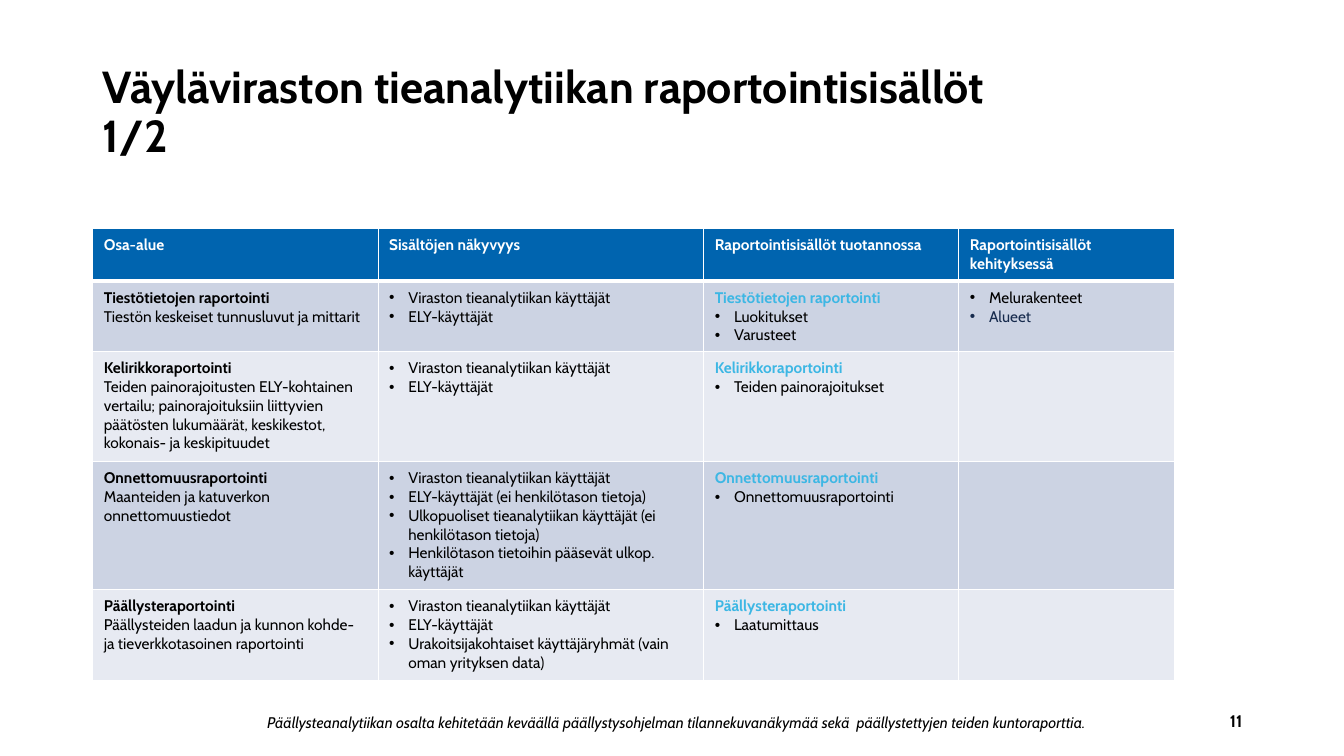
from dataclasses import dataclass

from lxml import etree
from pptx import Presentation
from pptx import util as u
from pptx.dml.color import RGBColor
from pptx.enum import text as t
from pptx.oxml import ns

FONT = "Cabin"
BLACK = RGBColor(0x00, 0x00, 0x00)
WHITE = RGBColor(0xFF, 0xFF, 0xFF)
HEADER_BLUE = RGBColor(0x00, 0x64, 0xAF)
LINK_BLUE = RGBColor(0x3D, 0xB7, 0xE4)
NAVY = RGBColor(0x17, 0x2B, 0x4D)
BANDS = (RGBColor(0xCC, 0xD3, 0xE3), RGBColor(0xE7, 0xEA, 0xF2))

COLUMN_WIDTHS = (2.83, 3.23, 2.53, 2.14)
ROW_HEIGHTS = (0.52, 0.7, 1.09, 1.27, 0.9)
BULLET_INDENT = u.Inches(0.19)


@dataclass(frozen=True)
class Line:
    text: str
    size: float = 11
    color: RGBColor = BLACK
    bold: bool = False
    italic: bool = False
    bullet: bool = False
    align: t.PP_ALIGN = t.PP_ALIGN.LEFT


@dataclass(frozen=True)
class Area:
    name: str
    description: str
    viewers: tuple[str, ...]
    in_production: tuple[str, ...]
    in_development: tuple[Line, ...] = ()


def bullets(*texts: str) -> list[Line]:
    return [Line(text, bullet=True) for text in texts]


def write(frame, lines: list[Line]) -> None:
    for index, line in enumerate(lines):
        paragraph = frame.add_paragraph() if index else frame.paragraphs[0]
        paragraph.alignment = line.align
        if line.bullet:
            properties = paragraph._p.get_or_add_pPr()
            properties.set("marL", str(BULLET_INDENT))
            properties.set("indent", str(-BULLET_INDENT))
            etree.SubElement(properties, ns.qn("a:buFont"), typeface="Arial")
            etree.SubElement(properties, ns.qn("a:buChar"), char="•")
        run = paragraph.add_run()
        run.text = line.text
        style = {"name": FONT, "size": u.Pt(line.size),
                 "bold": line.bold, "italic": line.italic}
        for attribute, value in style.items():
            setattr(run.font, attribute, value)
        run.font.color.rgb = line.color


def add_text(slide, place: tuple[float, ...], line: Line, anchor: t.MSO_ANCHOR) -> None:
    frame = slide.shapes.add_textbox(*map(u.Inches, place)).text_frame
    frame.word_wrap = True
    frame.vertical_anchor = anchor
    write(frame, [line])


def set_borders(cell, bottom: float) -> None:
    properties = cell._tc.get_or_add_tcPr()
    for side, width in (("L", 1), ("R", 1), ("T", 1), ("B", bottom)):
        border = etree.SubElement(properties, ns.qn(f"a:ln{side}"), w=str(u.Pt(width)))
        fill = etree.SubElement(border, ns.qn("a:solidFill"))
        etree.SubElement(fill, ns.qn("a:srgbClr"), val=str(WHITE))


def fill_cell(cell, lines: list[Line], color: RGBColor, bottom: float = 1) -> None:
    margins = {"margin_left": 0.11, "margin_right": 0.11,
               "margin_top": 0.07, "margin_bottom": 0.07}
    for attribute, value in margins.items():
        setattr(cell, attribute, u.Inches(value))
    set_borders(cell, bottom)
    cell.fill.solid()
    cell.fill.fore_color.rgb = color
    write(cell.text_frame, lines)


HEADINGS = ("Osa-alue", "Sisältöjen näkyvyys",
            "Raportointisisällöt tuotannossa", "Raportointisisällöt kehityksessä")
AGENCY = "Viraston tieanalytiikan käyttäjät"
ELY = "ELY-käyttäjät"
AREAS = (
    Area("Tiestötietojen raportointi",
         "Tiestön keskeiset tunnusluvut ja mittarit",
         (AGENCY, ELY),
         ("Luokitukset", "Varusteet"),
         (Line("Melurakenteet", bullet=True), Line("Alueet", color=NAVY, bullet=True))),
    Area("Kelirikkoraportointi",
         "Teiden painorajoitusten ELY-kohtainen vertailu; painorajoituksiin liittyvien "
         "päätösten lukumäärät, keskikestot, kokonais- ja keskipituudet",
         (AGENCY, ELY),
         ("Teiden painorajoitukset",)),
    Area("Onnettomuusraportointi",
         "Maanteiden ja katuverkon onnettomuustiedot",
         (AGENCY, f"{ELY} (ei henkilötason tietoja)",
          "Ulkopuoliset tieanalytiikan käyttäjät (ei henkilötason tietoja)",
          "Henkilötason tietoihin pääsevät ulkop. käyttäjät"),
         ("Onnettomuusraportointi",)),
    Area("Päällysteraportointi",
         "Päällysteiden laadun ja kunnon kohde- ja tieverkkotasoinen raportointi",
         (AGENCY, ELY, "Urakoitsijakohtaiset käyttäjäryhmät (vain oman yrityksen data)"),
         ("Laatumittaus",)),
)


def add_title(slide) -> None:
    title = slide.shapes.title
    place = {"left": 0.92, "top": 0.4, "width": 9.45, "height": 1.45}
    for attribute, value in place.items():
        setattr(title, attribute, u.Inches(value))
    frame = title.text_frame
    frame.word_wrap = True
    frame.auto_size = t.MSO_AUTO_SIZE.NONE
    frame.vertical_anchor = t.MSO_ANCHOR.MIDDLE
    write(frame, [Line("Väyläviraston tieanalytiikan raportointisisällöt 1/2", 32, bold=True)])
    frame.paragraphs[0].line_spacing = 0.9


def add_report_table(slide) -> None:
    table = slide.shapes.add_table(
        len(ROW_HEIGHTS), len(COLUMN_WIDTHS), u.Inches(0.92), u.Inches(2.27),
        u.Inches(sum(COLUMN_WIDTHS)), u.Inches(sum(ROW_HEIGHTS))).table
    for column, width in zip(table.columns, COLUMN_WIDTHS):
        column.width = u.Inches(width)
    for row, height in zip(table.rows, ROW_HEIGHTS):
        row.height = u.Inches(height)

    for cell, heading in zip(table.rows[0].cells, HEADINGS):
        fill_cell(cell, [Line(heading, color=WHITE, bold=True)], HEADER_BLUE, bottom=3)
    for index, area in enumerate(AREAS):
        contents = (
            [Line(area.name, bold=True), Line(area.description)],
            bullets(*area.viewers),
            [Line(area.name, color=LINK_BLUE, bold=True), *bullets(*area.in_production)],
            list(area.in_development),
        )
        for cell, lines in zip(table.rows[index + 1].cells, contents):
            fill_cell(cell, lines, BANDS[index % 2])


def main() -> None:
    deck = Presentation()
    deck.slide_width, deck.slide_height = u.Inches(13.33), u.Inches(7.5)
    slide = deck.slides.add_slide(deck.slide_layouts[5])

    # Title and table
    add_title(slide)
    add_report_table(slide)

    # Page number and footnote
    add_text(slide, (9.42, 6.95, 3, 0.4),
             Line("11", 12, bold=True, align=t.PP_ALIGN.RIGHT), t.MSO_ANCHOR.MIDDLE)
    add_text(slide, (2.55, 7.03, 10.45, 0.29),
             Line("Päällysteanalytiikan osalta kehitetään keväällä päällystysohjelman "
                  "tilannekuvanäkymää sekä  päällystettyjen teiden kuntoraporttia.",
                  italic=True), t.MSO_ANCHOR.TOP)
    deck.save("out.pptx")


if __name__ == "__main__":
    main()
